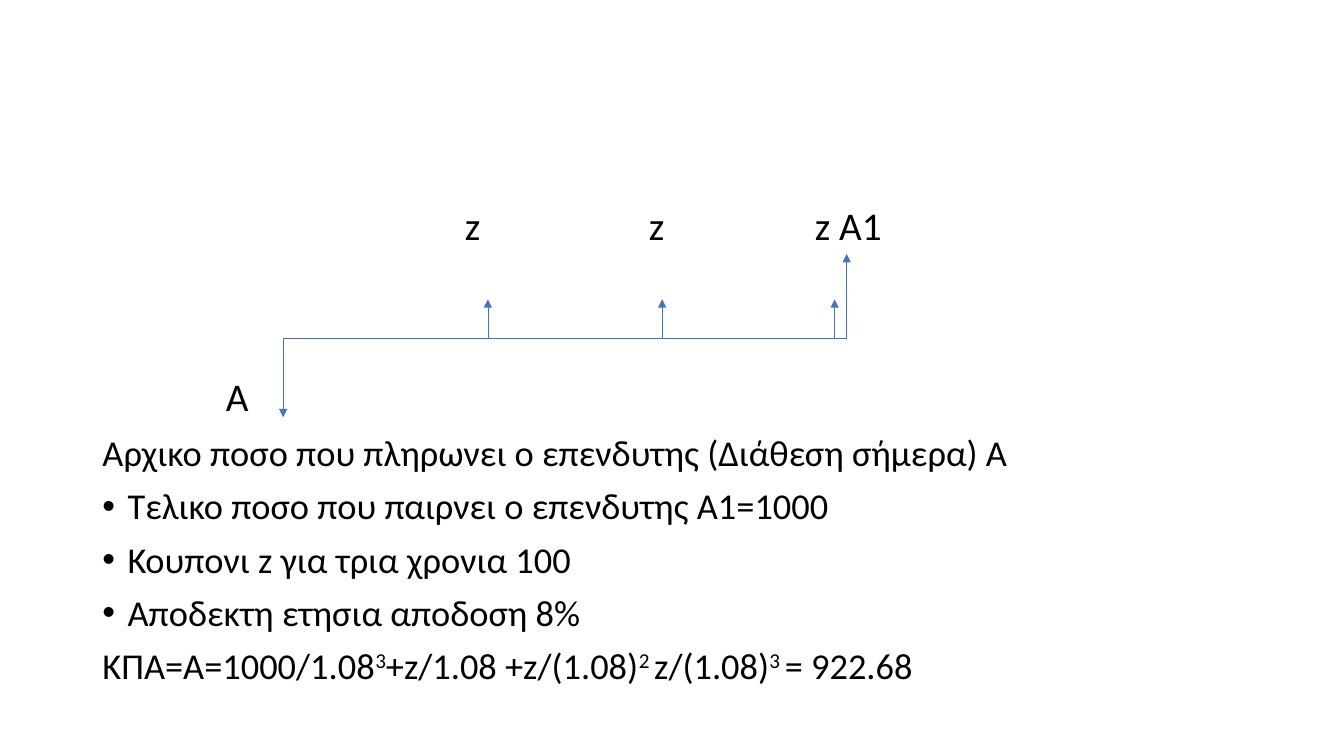
from lxml import etree
from pptx import Presentation
from pptx.enum import shapes, text
from pptx.dml.color import RGBColor
from pptx.oxml import ns
from pptx.util import Pt

COLORS = {"text": "000000", "line": "4472C4"}
FONT = "Calibri"

# Content: cash-flow labels as (text, left, top)
LABELS = [
    ("z", 332, 147.6),
    ("z", 463.5, 147.6),
    ("z A1", 582, 147.6),
    ("Α", 161.3, 269.9),
]
# Each note is (bulleted, runs); each run is (text, superscript)
NOTES = [
    (False, [("Αρχικο ποσο που πληρωνει ο επενδυτης (Διάθεση σήμερα) Α", False)]),
    (True, [("Τελικο ποσο που παιρνει ο επενδυτης Α1=1000", False)]),
    (True, [("Κουπονι z για τρια χρονια 100", False)]),
    (True, [("Αποδεκτη ετησια αποδοση 8%", False)]),
    (False, [("ΚΠΑ=Α=1000/1.08", False), ("3", True),
             ("+z/1.08 +z/(1.08)", False), ("2 ", True),
             ("z/(1.08)", False), ("3 ", True), ("= 922.68", False)]),
]
# Timeline: start, end and height of the axis, then arrows as (x, tip height)
START, END, AXIS = 202.3, 604.8, 241.9
COUPON_TIP = 213.8
ARROWS = [(348.5, COUPON_TIP), (473, COUPON_TIP), (END, 181.4),
          (START, 298.1), (596.2, COUPON_TIP)]


def format_run(span, size):
    span.font.name = FONT
    span.font.size = Pt(size)
    span.font.color.rgb = RGBColor.from_string(COLORS["text"])


def add_line(page, x1, y1, x2, y2, arrow=False):
    line = page.shapes.add_connector(
        shapes.MSO_CONNECTOR.STRAIGHT, Pt(x1), Pt(y1), Pt(x2), Pt(y2))
    line.line.color.rgb = RGBColor.from_string(COLORS["line"])
    line.line.width = Pt(0.5)
    if arrow:
        etree.SubElement(line.line._get_or_add_ln(), ns.qn("a:tailEnd"), type="triangle")
    etree.SubElement(line._element.spPr, ns.qn("a:effectLst"))


deck = Presentation()
deck.slide_width, deck.slide_height = Pt(960), Pt(540)
page = deck.slides.add_slide(deck.slide_layouts[1])
title = page.shapes.title
title._element.getparent().remove(title._element)

# Notes and formula
body = page.placeholders[1]
body.left, body.top, body.width, body.height = Pt(66), Pt(307.1), Pt(828), Pt(214)
frame = body.text_frame
frame.auto_size = text.MSO_AUTO_SIZE.NONE
frame.vertical_anchor = text.MSO_ANCHOR.TOP
for number, (bulleted, runs) in enumerate(NOTES):
    para = frame.add_paragraph() if number else frame.paragraphs[0]
    para.line_spacing = 0.9
    para.space_before = Pt(10 if number else 0)
    properties = para._p.get_or_add_pPr()
    indent = Pt(18) if bulleted else 0
    properties.set("marL", str(indent))
    properties.set("indent", str(-indent))
    if bulleted:
        etree.SubElement(properties, ns.qn("a:buFont"), typeface="Arial")
        etree.SubElement(properties, ns.qn("a:buChar"), char="•")
    else:
        etree.SubElement(properties, ns.qn("a:buNone"))
    for words, raised in runs:
        span = para.add_run()
        span.text = words
        format_run(span, 26)
        if raised:
            span.font._element.set("baseline", "30000")

# Cash-flow labels
for words, left, top in LABELS:
    box = page.shapes.add_textbox(Pt(left), Pt(top), Pt(70), Pt(31))
    frame = box.text_frame
    frame.word_wrap = True
    frame.margin_left = frame.margin_right = frame.margin_top = frame.margin_bottom = 0
    frame.text = words
    para = frame.paragraphs[0]
    para.line_spacing = 0.9
    format_run(para.runs[0], 28)

# Timeline and cash-flow arrows
add_line(page, START, AXIS, END, AXIS)
for x, tip in ARROWS:
    add_line(page, x, AXIS, x, tip, arrow=True)

deck.save("out.pptx")
